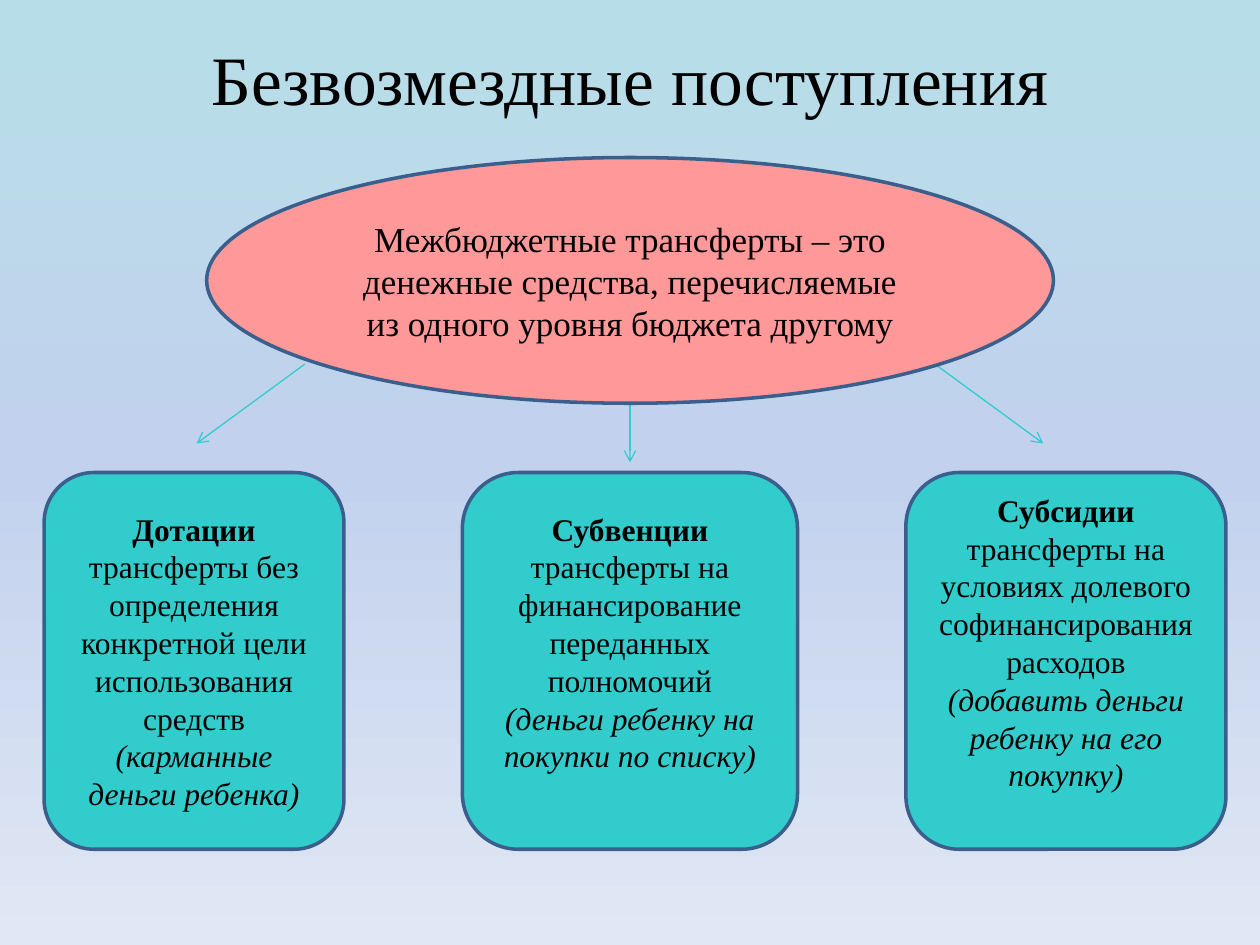
from copy import deepcopy
from dataclasses import dataclass

from lxml.etree import SubElement
from pptx import Presentation
from pptx.dml.color import RGBColor
from pptx.enum.shapes import MSO_CONNECTOR as Link, MSO_SHAPE as Form
from pptx.enum.text import MSO_ANCHOR as Anchor, PP_ALIGN as Align
from pptx.oxml.ns import qn
from pptx.util import Inches, Pt

WIDE, HIGH = Inches(10), Inches(7.5)
BLACK, TEAL, PINK, EDGE = "000000", "33CCCC", "FF9999", "3A5F8C"
SKY = ((0, "B7DEE8"), (0.5, "C2D1ED"), (1, "E1E8F5"))


@dataclass
class Area:
    """A rectangle in percent of the slide."""
    left: float
    top: float
    width: float
    height: float

    def frame(self) -> tuple:
        """Return left, top, width and height in EMU."""
        return across(self.left), down(self.top), across(self.width), down(self.height)


@dataclass
class Card:
    """One kind of transfer."""
    left: float
    width: float
    name: str
    sense: str
    case: str
    foot: float = 0.05


@dataclass
class Arrow:
    """A line with a head at its end, in percent of the slide."""
    x1: float
    y1: float
    x2: float
    y2: float


CARDS = (
    Card(3.5, 23.8, "Дотации ",
         "трансферты без определения конкретной цели использования средств",
         "(карманные деньги ребенка)"),
    Card(36.7, 26.6, "Субвенции ",
         "трансферты на финансирование переданных полномочий",
         "(деньги ребенку на покупки по списку)", 0.35),
    Card(71.9, 25.4, "Субсидии ",
         "трансферты на условиях долевого софинансирования расходов",
         "(добавить деньги ребенку на его покупку)", 0.35),
)
ARROWS = (
    Arrow(24.2, 38.53, 15.6, 46.93),
    Arrow(50, 41.6, 50, 48.93),
    Arrow(74.2, 38.53, 82.8, 46.93),
)


def across(share: float) -> int:
    """Turn a percentage of the width into EMU."""
    return round(WIDE * share / 100)


def down(share: float) -> int:
    """Turn a percentage of the height into EMU."""
    return round(HIGH * share / 100)


def tint(target, code: str) -> None:
    """Give a colour format its hex colour."""
    target.rgb = RGBColor.from_string(code)


def write(par, text: str, size: float = 18, bold: bool = False, slant: bool = False) -> None:
    """Add a run of text to a centred paragraph."""
    par.alignment = Align.CENTER
    run = par.add_run()
    run.text = text
    font = run.font
    font.name, font.size, font.bold, font.italic = "Times New Roman", Pt(size), bold, slant
    tint(font.color, BLACK)


def set_up(shape):
    """Wrap and centre the text of a shape and return its frame."""
    body = shape.text_frame
    body.word_wrap = True
    body.vertical_anchor = Anchor.MIDDLE
    return body


def add_form(slide, form: Form, area: Area, fill: str):
    """Draw an outlined shape and return its text frame."""
    shape = slide.shapes.add_shape(form, *area.frame())
    shape.shadow.inherit = False
    shape.fill.solid()
    tint(shape.fill.fore_color, fill)
    tint(shape.line.color, EDGE)
    shape.line.width = Pt(2)
    return set_up(shape)


def add_card(slide, card: Card) -> None:
    """Draw a card with its name, sense and example."""
    area = Area(card.left, 50, card.width, 39.87)
    body = add_form(slide, Form.FLOWCHART_ALTERNATE_PROCESS, area, TEAL)
    body.margin_bottom = Inches(card.foot)
    first = body.paragraphs[0]
    write(first, card.name, bold=True)
    write(first, card.sense)
    write(body.add_paragraph(), card.case, slant=True)


def add_arrow(slide, arrow: Arrow) -> None:
    """Draw a thin arrow."""
    line = slide.shapes.add_connector(
        Link.STRAIGHT, across(arrow.x1), down(arrow.y1), across(arrow.x2), down(arrow.y2))
    tint(line.line.color, TEAL)
    line.line.width = Pt(0.75)
    SubElement(line.line._get_or_add_ln(), qn("a:tailEnd"), type="arrow")
    SubElement(line._element.spPr, qn("a:effectLst"))


def paint(slide) -> None:
    """Fill the background with a gradient from top to bottom."""
    fill = slide.background.fill
    fill.gradient()
    fill.gradient_angle = 270
    stops = slide._element.find(".//" + qn("a:gsLst"))
    stops.append(deepcopy(stops[0]))
    for stop, (place, code) in zip(fill.gradient_stops, SKY):
        stop.position = place
        tint(stop.color, code)


def main() -> None:
    """Build the slide and save it."""
    deck = Presentation()
    deck.slide_width, deck.slide_height = WIDE, HIGH
    slide = deck.slides.add_slide(deck.slide_layouts[6])
    paint(slide)
    title = set_up(slide.shapes.add_textbox(*Area(5, 4, 90, 8.53).frame()))
    write(title.paragraphs[0], "Безвозмездные поступления", size=39.6)
    for card in CARDS:
        add_card(slide, card)
    for arrow in ARROWS:
        add_arrow(slide, arrow)
    oval = add_form(slide, Form.OVAL, Area(16.4, 16.67, 67.2, 26), PINK)
    write(oval.paragraphs[0],
          "Межбюджетные трансферты – это денежные средства, "
          "перечисляемые из одного уровня бюджета другому", size=20)
    deck.save("out.pptx")


if __name__ == "__main__":
    main()
